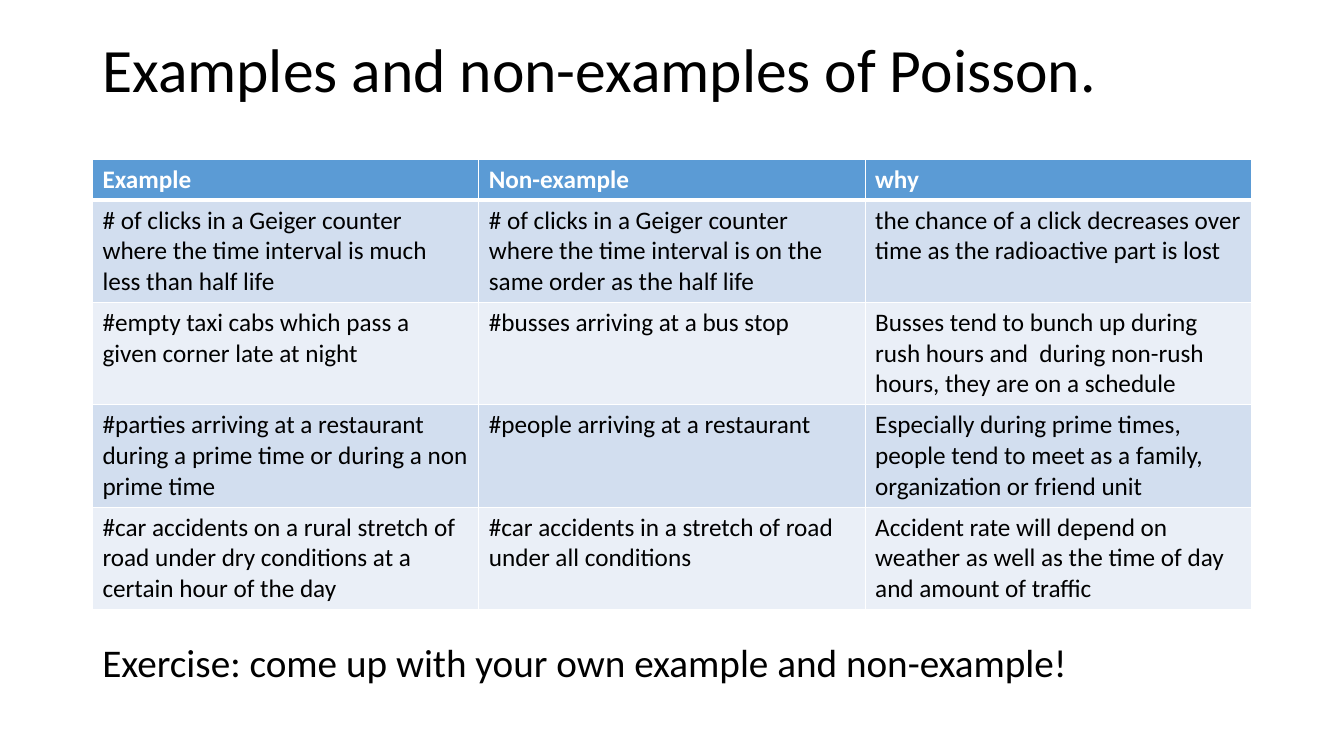
from dataclasses import dataclass

import lxml.etree
import pptx
import pptx.dml.color
import pptx.enum.text
import pptx.oxml.ns
import pptx.util

Cm = pptx.util.Cm
Pt = pptx.util.Pt

FONT = "Calibri"
BLACK = "000000"
WHITE = "FFFFFF"
HEADER_FILL = "5B9BD5"
BAND_FILLS = ("D2DEEF", "EAEFF7")

LEFT = 2.33
CONTENT_WIDTH = 29.21
HEADER_HEIGHT = 1.03
ROW_HEIGHT = 2.58


@dataclass(frozen=True)
class Caption:
    text: str
    top: float
    width: float
    height: float
    size: float
    anchor: pptx.enum.text.MSO_ANCHOR
    line_spacing: float
    wrap: bool


@dataclass(frozen=True)
class Comparison:
    example: str
    non_example: str
    why: str


CAPTIONS = (
    Caption("Examples and non-examples of Poisson.", 0, CONTENT_WIDTH, 3.68, 44,
            pptx.enum.text.MSO_ANCHOR.MIDDLE, 0.9, True),
    Caption("Exercise: come up with your own example and non-example!", 15.95, 25.02, 1.45, 28,
            pptx.enum.text.MSO_ANCHOR.TOP, 1.0, False),
)

COMPARISONS = (
    Comparison("Example", "Non-example", "why"),
    Comparison(
        "# of clicks in a Geiger counter where the time interval is much less than half life",
        "# of clicks in a Geiger counter where the time interval is on the same order as the half life",
        "the chance of a click decreases over time as the radioactive part is lost",
    ),
    Comparison(
        "#empty taxi cabs which pass a given corner late at night",
        "#busses arriving at a bus stop",
        "Busses tend to bunch up during rush hours and  during non-rush hours, they are on a schedule",
    ),
    Comparison(
        "#parties arriving at a restaurant during a prime time or during a non prime time",
        "#people arriving at a restaurant",
        "Especially during prime times, people tend to meet as a family, organization or friend unit",
    ),
    Comparison(
        "#car accidents on a rural stretch of road under dry conditions at a certain hour of the day",
        "#car accidents in a stretch of road under all conditions",
        "Accident rate will depend on weather as well as the time of day and amount of traffic",
    ),
)


def color(value: str) -> pptx.dml.color.RGBColor:
    return pptx.dml.color.RGBColor.from_string(value)


def format_text(frame, size: float, text_color: str, bold: bool = False) -> None:
    for paragraph in frame.paragraphs:
        for run in paragraph.runs:
            run.font.name = FONT
            run.font.size = Pt(size)
            run.font.bold = bold
            run.font.color.rgb = color(text_color)


def add_caption(slide, caption: Caption) -> None:
    box = slide.shapes.add_textbox(Cm(LEFT), Cm(caption.top), Cm(caption.width), Cm(caption.height))
    frame = box.text_frame
    frame.text = caption.text
    frame.word_wrap = caption.wrap
    frame.vertical_anchor = caption.anchor
    frame.paragraphs[0].line_spacing = caption.line_spacing
    format_text(frame, caption.size, BLACK)


def set_borders(cell, top: float, bottom: float) -> None:
    qn = pptx.oxml.ns.qn
    properties = cell._tc.get_or_add_tcPr()
    for side, width in (("L", 1), ("R", 1), ("T", top), ("B", bottom)):
        line = lxml.etree.SubElement(properties, qn(f"a:ln{side}"), w=str(Pt(width)))
        fill = lxml.etree.SubElement(line, qn("a:solidFill"))
        lxml.etree.SubElement(fill, qn("a:srgbClr"), val=WHITE)


def add_comparison_table(slide, comparisons: tuple[Comparison, ...]) -> None:
    height = HEADER_HEIGHT + ROW_HEIGHT * (len(comparisons) - 1)
    table = slide.shapes.add_table(
        len(comparisons), 3, Cm(LEFT), Cm(4.01), Cm(CONTENT_WIDTH), Cm(height)
    ).table
    for row_index, comparison in enumerate(comparisons):
        is_header = row_index == 0
        table.rows[row_index].height = Cm(HEADER_HEIGHT if is_header else ROW_HEIGHT)
        row_fill = HEADER_FILL if is_header else BAND_FILLS[(row_index - 1) % 2]
        texts = (comparison.example, comparison.non_example, comparison.why)
        for column_index, text in enumerate(texts):
            cell = table.cell(row_index, column_index)
            cell.text_frame.text = text
            format_text(cell.text_frame, 18, WHITE if is_header else BLACK, is_header)
            set_borders(cell, 3 if row_index == 1 else 1, 3 if is_header else 1)
            cell.fill.solid()
            cell.fill.fore_color.rgb = color(row_fill)


def main() -> None:
    presentation = pptx.Presentation()
    presentation.slide_width = Cm(33.87)
    presentation.slide_height = Cm(19.05)
    slide = presentation.slides.add_slide(presentation.slide_layouts[6])
    for caption in CAPTIONS:
        add_caption(slide, caption)
    add_comparison_table(slide, COMPARISONS)
    presentation.save("out.pptx")


if __name__ == "__main__":
    main()
